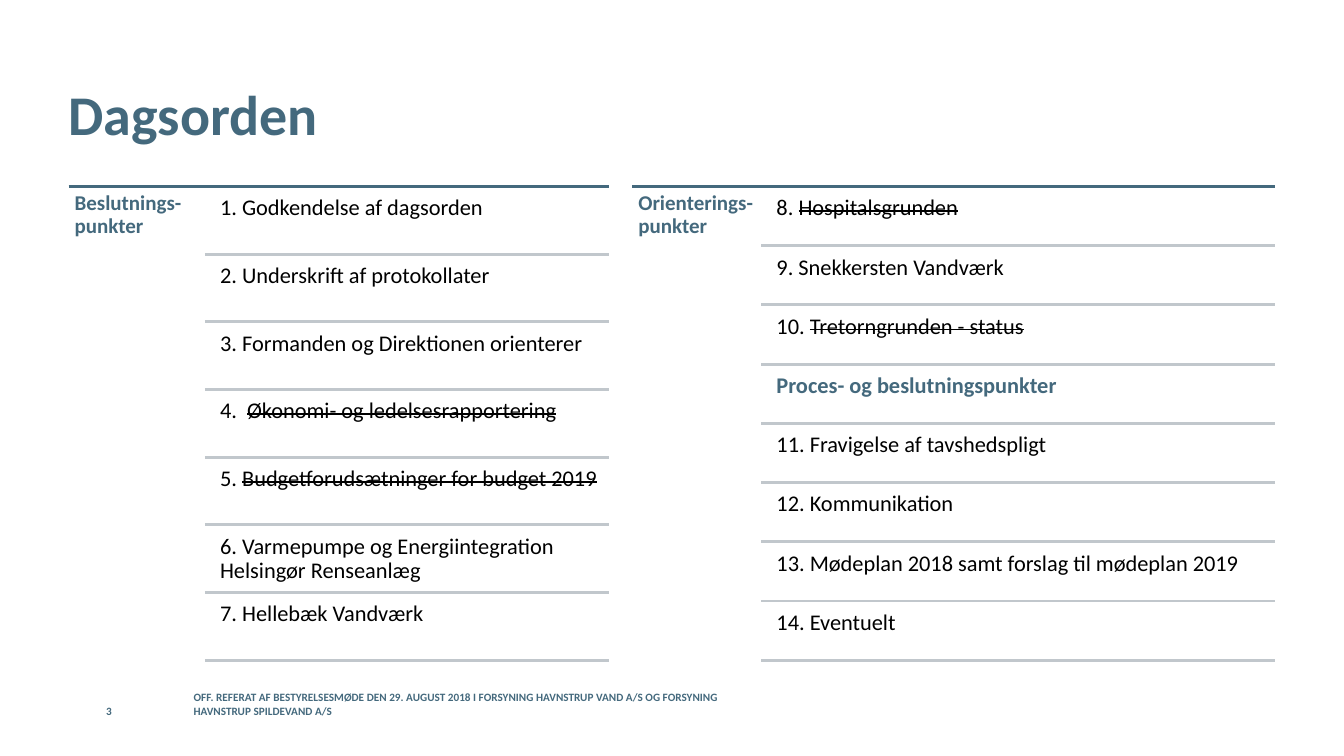
import dataclasses

import pptx
import pptx.dml.color
import pptx.enum.shapes
import pptx.enum.text
import pptx.oxml.ns
import pptx.util
from lxml import etree

SLIDE_WIDTH = pptx.util.Inches(13.33)
SLIDE_HEIGHT = pptx.util.Inches(7.5)


@dataclasses.dataclass(frozen=True)
class Theme:
    font: str = "Calibri"
    accent: str = "44697D"
    body: str = "000000"
    divider: str = "C1C7CC"
    title_size: int = 40
    item_size: int = 16
    label_size: int = 15
    footer_size: int = 8
    line_width: int = 2


THEME = Theme()

AGENDA_TOP = 24.67
AGENDA_BOTTOM = 87.33
ITEM_INDENT = 0.6
ITEM_DROP = 0.4

DECISION_ITEMS = [
    ("1. Godkendelse af dagsorden", ""),
    ("2. Underskrift af protokollater", ""),
    ("3. Formanden og Direktionen orienterer", ""),
    ("4.  ", "Økonomi- og ledelsesrapportering"),
    ("5. ", "Budgetforudsætninger for budget 2019"),
    ("6. Varmepumpe og Energiintegration Helsingør Renseanlæg", ""),
    ("7. Hellebæk Vandværk", ""),
]
SECTION_HEADING = "Proces- og beslutningspunkter"
BRIEFING_ITEMS = [
    ("8. ", "Hospitalsgrunden"),
    ("9. Snekkersten Vandværk", ""),
    ("10. ", "Tretorngrunden - status"),
    (SECTION_HEADING, ""),
    ("11. Fravigelse af tavshedspligt", ""),
    ("12. Kommunikation", ""),
    ("13. Mødeplan 2018 samt forslag til mødeplan 2019", ""),
    ("14. Eventuelt", ""),
]
FOOTER = (
    "OFF. REFERAT AF BESTYRELSESMØDE DEN 29. AUGUST 2018 I FORSYNING "
    "HAVNSTRUP VAND A/S OG FORSYNING HAVNSTRUP SPILDEVAND A/S"
)


def across(percent):
    return round(SLIDE_WIDTH * percent / 100)


def down(percent):
    return round(SLIDE_HEIGHT * percent / 100)


def write_text(shape, text, *, size, color=THEME.body, bold=False, struck="",
               inset=0.0, anchor="TOP", line_spacing=1.0):
    frame = shape.text_frame
    frame.word_wrap = True
    frame.auto_size = pptx.enum.text.MSO_AUTO_SIZE.NONE
    frame.vertical_anchor = pptx.enum.text.MSO_ANCHOR[anchor]
    frame.margin_left = frame.margin_right = pptx.util.Inches(inset)
    frame.margin_top = frame.margin_bottom = pptx.util.Inches(inset)
    paragraph = frame.paragraphs[0]
    paragraph.alignment = pptx.enum.text.PP_ALIGN.LEFT
    paragraph.line_spacing = line_spacing
    for content, is_struck in ((text, False), (struck, True)):
        if not content:
            continue
        run = paragraph.add_run()
        run.text = content
        run.font.name = THEME.font
        run.font.size = pptx.util.Pt(size)
        run.font.bold = bold
        run.font.color.rgb = pptx.dml.color.RGBColor.from_string(color)
        if is_struck:
            run._r.get_or_add_rPr().set("strike", "sngStrike")


def add_text(shapes, text, left, top, width, height, **text_format):
    shape = shapes.add_textbox(across(left), down(top), across(width), down(height))
    write_text(shape, text, **text_format)


def add_rule(shapes, left, right, top, color):
    line = shapes.add_connector(
        pptx.enum.shapes.MSO_CONNECTOR.STRAIGHT,
        across(left), down(top), across(right), down(top),
    )
    line.line.color.rgb = pptx.dml.color.RGBColor.from_string(color)
    line.line.width = pptx.util.Pt(THEME.line_width)
    etree.SubElement(line._element.spPr, pptx.oxml.ns.qn("a:effectLst"))


def add_agenda(slide, label, items, left, item_left, right):
    shapes = slide.shapes.add_group_shape().shapes
    add_rule(shapes, left, right, AGENDA_TOP, THEME.accent)
    add_text(shapes, label, left, AGENDA_TOP, item_left - left,
             AGENDA_BOTTOM - AGENDA_TOP, size=THEME.label_size,
             color=THEME.accent, bold=True, inset=0.06, line_spacing=0.9)
    row_height = (AGENDA_BOTTOM - AGENDA_TOP) / len(items)
    text_left = item_left + ITEM_INDENT
    for index, (text, struck) in enumerate(items):
        row_top = AGENDA_TOP + index * row_height
        is_heading = text == SECTION_HEADING
        add_text(shapes, text, text_left, row_top + ITEM_DROP,
                 right - text_left, row_height - ITEM_DROP,
                 size=THEME.item_size, struck=struck, bold=is_heading,
                 color=THEME.accent if is_heading else THEME.body,
                 inset=0.07, line_spacing=0.9)
        add_rule(shapes, item_left, right, row_top + row_height, THEME.divider)


def add_title(slide, text):
    title = slide.shapes.title
    title.left, title.top = across(5.1), down(5.33)
    title.width, title.height = across(86.27), down(19.33)
    write_text(title, text, size=THEME.title_size, color=THEME.accent,
               bold=True, anchor="MIDDLE")


def add_footer(slide, text, left, width):
    add_text(slide.shapes, text, left, 92.4, width, 2.53,
             size=THEME.footer_size, color=THEME.accent, bold=True,
             anchor="BOTTOM")


def main():
    presentation = pptx.Presentation()
    presentation.slide_width = SLIDE_WIDTH
    presentation.slide_height = SLIDE_HEIGHT
    slide = presentation.slides.add_slide(presentation.slide_layouts[5])
    add_title(slide, "Dagsorden")
    add_agenda(slide, "Beslutnings-punkter", DECISION_ITEMS, 5.1, 15.25, 45.3)
    add_agenda(slide, "Orienterings-punkter", BRIEFING_ITEMS, 47.05, 56.65, 94.9)
    add_footer(slide, FOOTER, 14.4, 42.55)
    add_footer(slide, "3", 7.9, 5.1)
    presentation.save("out.pptx")


if __name__ == "__main__":
    main()
